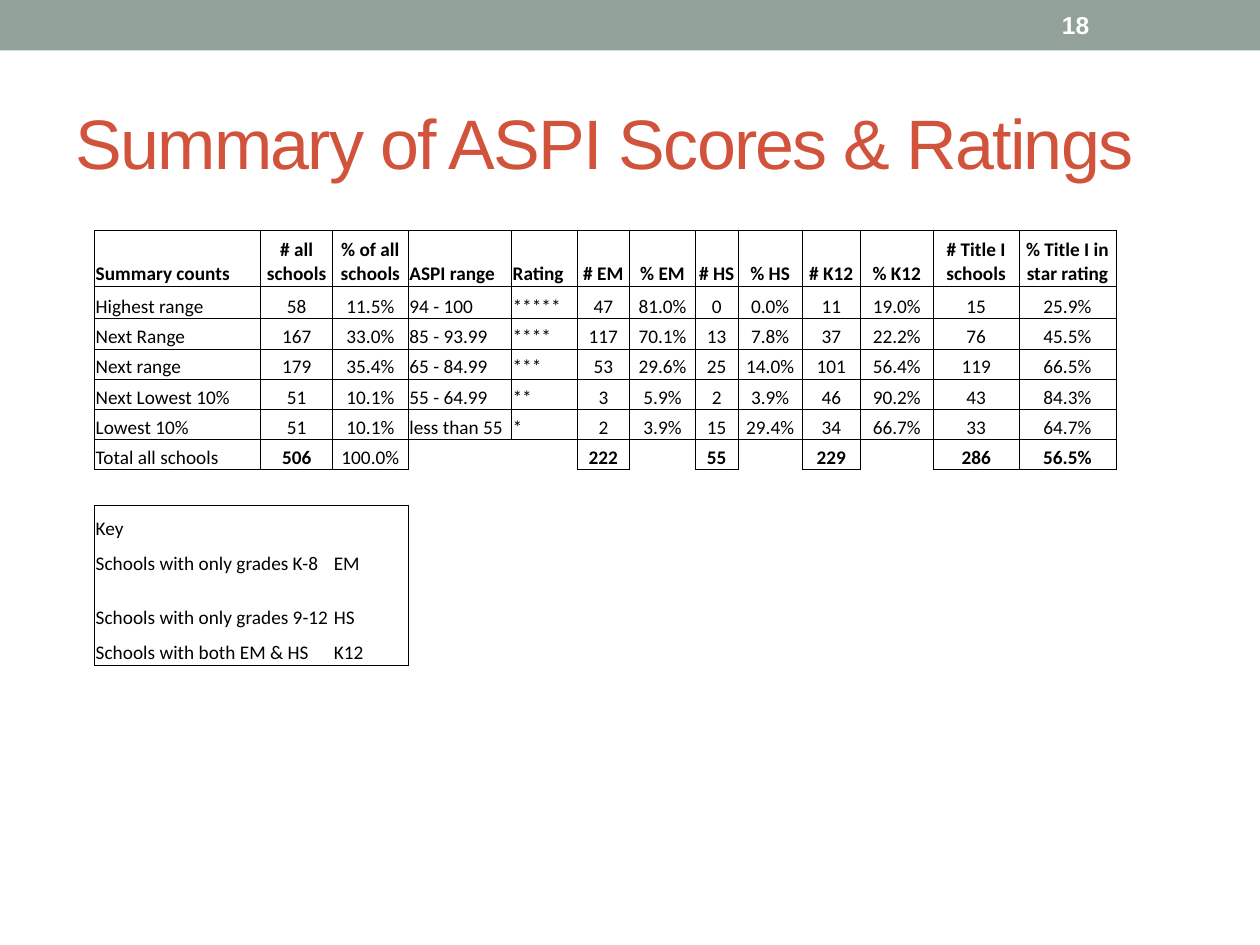
"""Build the slide summarising ASPI scores and ratings."""
from lxml import etree
from pptx import Presentation
from pptx.dml.color import RGBColor
from pptx.enum.shapes import MSO_SHAPE
from pptx.enum.text import MSO_ANCHOR, PP_ALIGN
from pptx.oxml.ns import qn
from pptx.util import Inches, Pt

RECTANGLE = MSO_SHAPE.RECTANGLE
MIDDLE, BOTTOM = MSO_ANCHOR.MIDDLE, MSO_ANCHOR.BOTTOM
LEFT, CENTER = PP_ALIGN.LEFT, PP_ALIGN.CENTER

WIDTHS = [1.32, 0.57, 0.6, 0.82, 0.52, 0.42, 0.52, 0.34, 0.51, 0.46, 0.58, 0.68, 0.77]
HEIGHTS = [0.44, 0.26] + [0.24] * 5 + [0.28] * 3 + [0.43, 0.28]
SUMMARY = [
    ["Summary counts", "# all schools", "% of all schools", "ASPI range", "Rating", "# EM", "% EM",
     "# HS", "% HS", "# K12", "% K12", "# Title I schools", "% Title I in star rating"],
    ["Highest range", "58", "11.5%", "94 - 100", "*****", "47", "81.0%",
     "0", "0.0%", "11", "19.0%", "15", "25.9%"],
    ["Next Range", "167", "33.0%", "85 - 93.99", "****", "117", "70.1%",
     "13", "7.8%", "37", "22.2%", "76", "45.5%"],
    ["Next range", "179", "35.4%", "65 - 84.99", "***", "53", "29.6%",
     "25", "14.0%", "101", "56.4%", "119", "66.5%"],
    ["Next Lowest 10%", "51", "10.1%", "55 - 64.99", "**", "3", "5.9%",
     "2", "3.9%", "46", "90.2%", "43", "84.3%"],
    ["Lowest 10%", "51", "10.1%", "less than 55", "*", "2", "3.9%",
     "15", "29.4%", "34", "66.7%", "33", "64.7%"],
    ["Total all schools", "506", "100.0%", "", "", "222", "",
     "55", "", "229", "", "286", "56.5%"],
]
KEY = [
    ["Key", "", ""],
    ["Schools with only grades K-8", "", "EM"],
    ["Schools with only grades 9-12", "", "HS"],
    ["Schools with both EM & HS", "", "K12"],
]
COLUMNS = len(WIDTHS)
TOTAL_ROW = len(SUMMARY) - 1
KEY_ROW = len(SUMMARY) + 1
GRID = [row + [""] * (COLUMNS - len(row)) for row in SUMMARY + [[]] + KEY]
SIDES = {"a:lnL": (0, -1), "a:lnR": (0, 1), "a:lnT": (-1, 0), "a:lnB": (1, 0)}


def add_span(para, text, size, color, font, bold=False):
    span = para.add_run()
    span.text = text
    span.font.size = Pt(size)
    span.font.name = font
    span.font.bold = bold
    span.font.color.rgb = RGBColor.from_string(color)
    return span


def region(row, column):
    if row in range(KEY_ROW, len(GRID)) and column in range(3):
        return "key"
    if row in range(KEY_ROW) and column in range(COLUMNS) and GRID[row][column]:
        return row, column
    return None


deck = Presentation()
deck.slide_width, deck.slide_height = Inches(10), Inches(7.5)
page = deck.slides.add_slide(deck.slide_layouts[5])

bar = page.shapes.add_shape(RECTANGLE, 0, 0, Inches(10), Inches(0.4))
bar.shadow.inherit = False
bar.fill.solid()
bar.fill.fore_color.rgb = RGBColor.from_string("93A299")
bar.line.fill.background()

title = page.shapes.title
title.left, title.top, title.width, title.height = Inches(0.5), Inches(0.58), Inches(9), Inches(1.08)
title.text_frame.vertical_anchor = MIDDLE
para = title.text_frame.paragraphs[0]
para.alignment = LEFT
span = add_span(para, "Summary of ASPI Scores & Ratings", 40, "D2533C", "Arial")
span.font._element.set("spc", "-100")

number = page.shapes.add_textbox(Inches(8.33), Inches(0.02), Inches(1.17), Inches(0.36))
number.text_frame.word_wrap = True
number.text_frame.vertical_anchor = MIDDLE
add_span(number.text_frame.paragraphs[0], "18", 14, "FFFFFF", "Arial", True)

frame = page.shapes.add_table(len(GRID), COLUMNS, Inches(0.75), Inches(1.83),
                              Inches(sum(WIDTHS)), Inches(sum(HEIGHTS)))
table = frame.table
table.first_row = table.horz_banding = False
for column, width in zip(table.columns, WIDTHS):
    column.width = Inches(width)
for row, height in zip(table.rows, HEIGHTS):
    row.height = Inches(height)
for row in range(KEY_ROW + 1, len(GRID)):
    table.cell(row, 0).merge(table.cell(row, 1))

for row, texts in enumerate(GRID):
    for column, text in enumerate(texts):
        cell = table.cell(row, column)
        cell.fill.background()
        cell.vertical_anchor = BOTTOM
        cell.margin_left = cell.margin_right = cell.margin_top = Inches(0.01)
        cell.margin_bottom = 0
        para = cell.text_frame.paragraphs[0]
        if text:
            centered = row < KEY_ROW and column not in (0, 3, 4)
            para.alignment = CENTER if centered else LEFT
            bold = row == 0 or (row == TOTAL_ROW and column not in (0, 2))
            add_span(para, text, 11, "000000", "Calibri", bold)
        else:
            etree.SubElement(para._p, qn("a:endParaRPr"), sz="1100")
        properties = cell._tc.get_or_add_tcPr()
        for position, (tag, (down, across)) in enumerate(SIDES.items()):
            line = etree.Element(qn(tag), w=str(Pt(0.5)))
            if region(row, column) != region(row + down, column + across):
                fill = etree.SubElement(line, qn("a:solidFill"))
                etree.SubElement(fill, qn("a:srgbClr"), val="000000")
            else:
                etree.SubElement(line, qn("a:noFill"))
            properties.insert(position, line)

deck.save("out.pptx")
